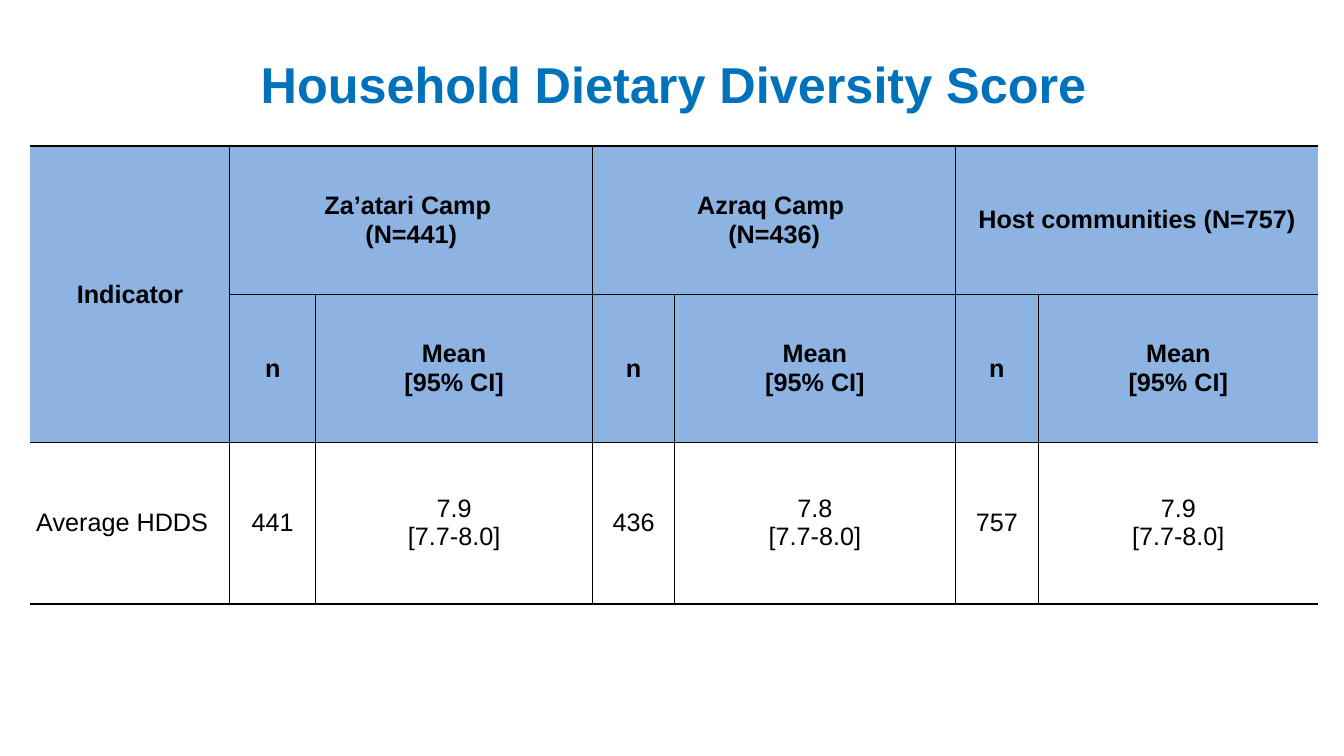
from lxml.etree import SubElement
from pptx import Presentation
from pptx.dml.color import RGBColor
from pptx.enum.text import MSO_ANCHOR as Anchor, PP_ALIGN as Align
from pptx.oxml.ns import qn
from pptx.util import Pt

BLACK = RGBColor(0x00, 0x00, 0x00)
TITLE_BLUE = RGBColor(0x00, 0x72, 0xBC)
HEADER_BLUE = RGBColor(0x8D, 0xB3, 0xE2)

COLUMN_WIDTHS = [142.6, 61.2, 198, 58.3, 200.9, 59, 200.2]
ROW_HEIGHTS = [105.8, 105.8, 115.2]
HEADER_ROWS = 2
GROUPS = [
    ("Za’atari Camp \n(N=441)", "441", "7.9\n[7.7-8.0]"),
    ("Azraq Camp \n(N=436)", "436", "7.8\n[7.7-8.0]"),
    ("Host communities (N=757)", "757", "7.9\n[7.7-8.0]"),
]
TITLE_FRAME = dict(margin_left=0, margin_right=0, margin_top=0, margin_bottom=0,
                   vertical_anchor=Anchor.BOTTOM, word_wrap=True)
CELL_FORMAT = dict(margin_left=Pt(4.3), margin_right=Pt(4.3), margin_top=0,
                   margin_bottom=0, vertical_anchor=Anchor.MIDDLE)


def apply_format(target, values):
    """Set every attribute named in the values on the target."""
    for name, value in values.items():
        setattr(target, name, value)


def write_text(text_frame, text, size, color, bold, alignment, line_spacing=None):
    """Write the lines of a text as formatted paragraphs."""
    text_frame.text = text
    for paragraph in text_frame.paragraphs:
        apply_format(paragraph, dict(alignment=alignment, line_spacing=line_spacing))
        for run in paragraph.runs:
            apply_format(run.font, dict(name="Arial", size=Pt(size), bold=bold))
            run.font.color.rgb = color


def add_title(slide, text):
    """Place and format the title placeholder."""
    title = slide.shapes.title
    apply_format(title, dict(left=Pt(21.6), top=Pt(21.6), width=Pt(919.4), height=Pt(60.5)))
    apply_format(title.text_frame, TITLE_FRAME)
    write_text(title.text_frame, text, 36, TITLE_BLUE, True, Align.CENTER, 0.9)


def border_widths(row, column):
    """Return the border widths of a cell, with 0 for no line."""
    last_row, last_column = len(ROW_HEIGHTS) - 1, len(COLUMN_WIDTHS) - 1
    spanning = row == 0
    return {
        "a:lnL": 0 if column == 0 or (spanning and column % 2 == 0) else 1,
        "a:lnR": 0 if column == last_column or (spanning and column % 2 == 1) else 1,
        "a:lnT": 1.5 if row == 0 else 0 if (row, column) == (1, 0) else 1,
        "a:lnB": 1.5 if row == last_row else 0 if (row, column) == (0, 0) else 1,
    }


def set_borders(cell, widths):
    """Draw the four borders of a cell."""
    properties = cell._tc.get_or_add_tcPr()
    for tag, width in widths.items():
        line = SubElement(properties, qn(tag), w=str(Pt(width)))
        if width:
            fill = SubElement(line, qn("a:solidFill"))
            SubElement(fill, qn("a:srgbClr"), val=str(BLACK))
        else:
            SubElement(line, qn("a:noFill"))


def format_cell(cell, row, column):
    """Set the margins, borders and fill of a cell."""
    apply_format(cell, CELL_FORMAT)
    set_borders(cell, border_widths(row, column))
    if row < HEADER_ROWS:
        cell.fill.solid()
        cell.fill.fore_color.rgb = HEADER_BLUE
    else:
        cell.fill.background()


def table_texts():
    """Return the text of each cell, keyed by row and column."""
    texts = {(0, 0): "Indicator", (2, 0): "Average HDDS"}
    for index, (group, count, mean) in enumerate(GROUPS):
        column = 1 + 2 * index
        texts[0, column] = group
        texts[1, column], texts[1, column + 1] = "n", "Mean\n[95% CI]"
        texts[2, column], texts[2, column + 1] = count, mean
    return texts


def add_score_table(slide):
    """Add the table of scores by population group."""
    table = slide.shapes.add_table(
        len(ROW_HEIGHTS), len(COLUMN_WIDTHS), Pt(21.6), Pt(104.4),
        Pt(sum(COLUMN_WIDTHS)), Pt(sum(ROW_HEIGHTS))).table
    apply_format(table, dict(first_row=False, horz_banding=False))
    for column, width in zip(table.columns, COLUMN_WIDTHS):
        column.width = Pt(width)
    for row, height in zip(table.rows, ROW_HEIGHTS):
        row.height = Pt(height)
    for row in range(len(ROW_HEIGHTS)):
        for column in range(len(COLUMN_WIDTHS)):
            format_cell(table.cell(row, column), row, column)
    table.cell(0, 0).merge(table.cell(1, 0))
    for column in range(1, len(COLUMN_WIDTHS), 2):
        table.cell(0, column).merge(table.cell(0, column + 1))
    for (row, column), text in table_texts().items():
        alignment = Align.LEFT if (row, column) == (2, 0) else Align.CENTER
        write_text(table.cell(row, column).text_frame, text, 18, BLACK,
                   row < HEADER_ROWS, alignment)


def main():
    """Build the slide and save it."""
    presentation = Presentation()
    apply_format(presentation, dict(slide_width=Pt(960), slide_height=Pt(540)))
    slide = presentation.slides.add_slide(presentation.slide_layouts[5])
    add_title(slide, "Household Dietary Diversity Score")
    add_score_table(slide)
    presentation.save("out.pptx")


if __name__ == "__main__":
    main()
